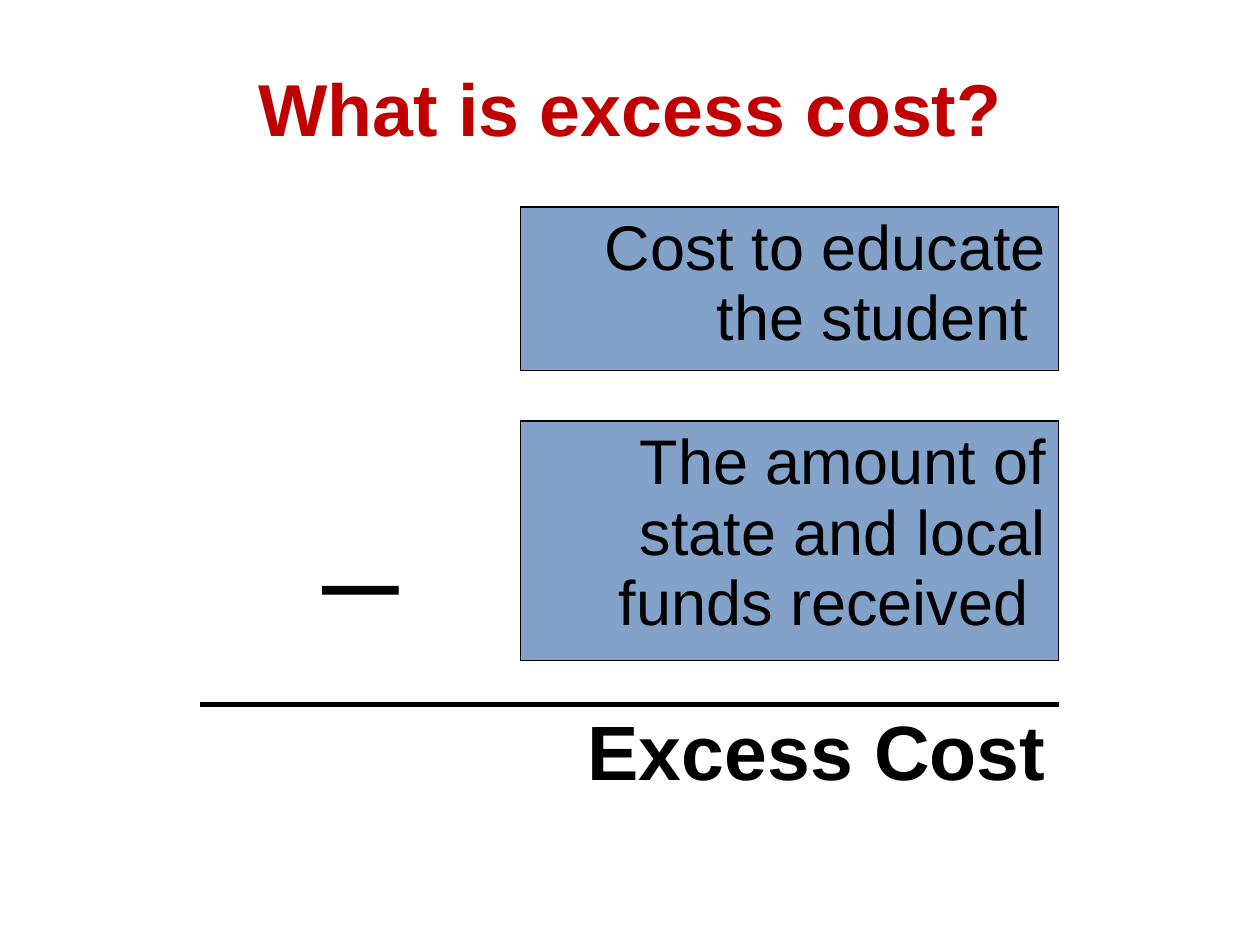
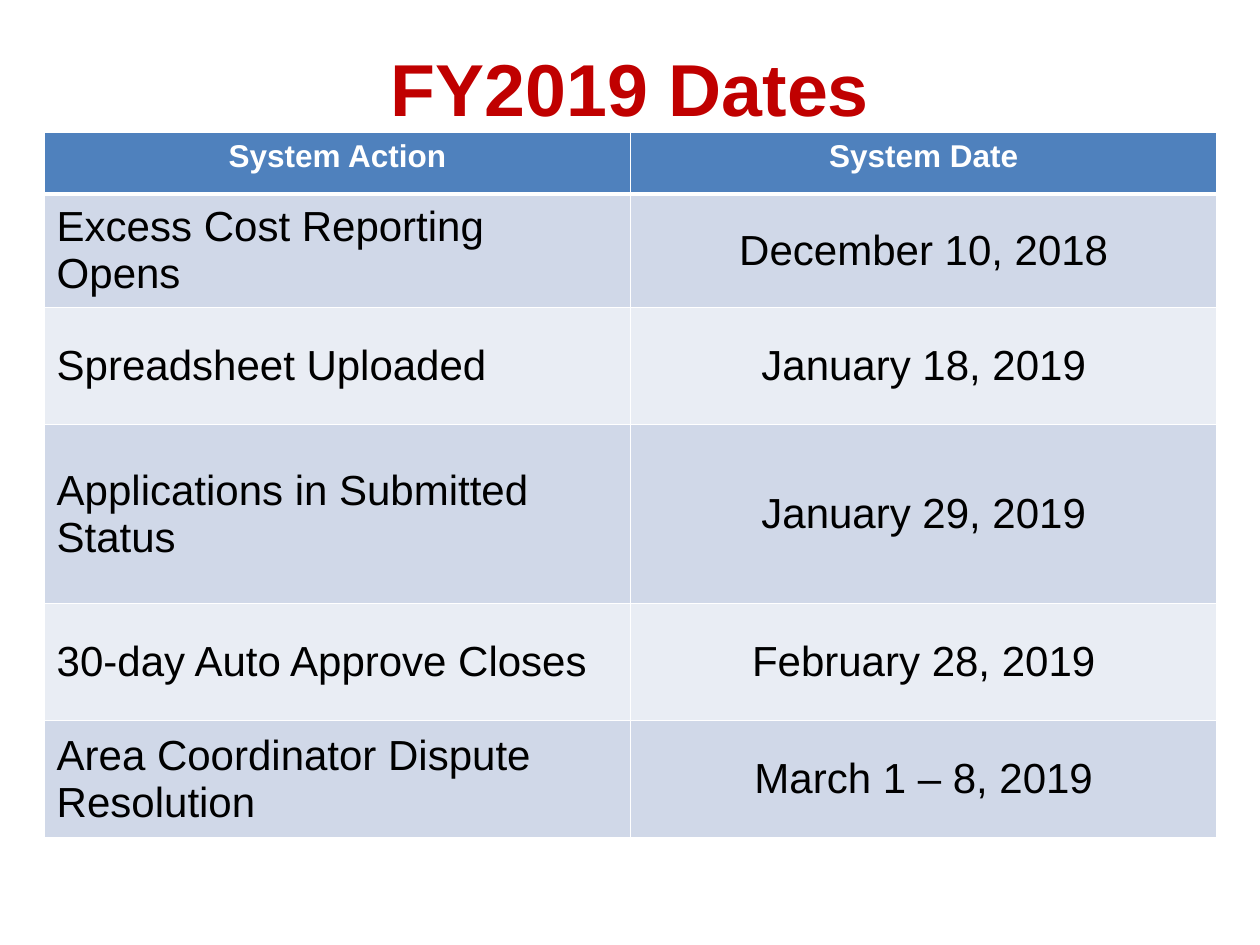
from lxml.etree import SubElement
from pptx import Presentation
from pptx.dml.color import RGBColor
from pptx.enum.text import MSO_ANCHOR, PP_ALIGN
from pptx.oxml.ns import qn
from pptx.util import Cm, Pt

RED = RGBColor(0xC0, 0x00, 0x00)
BLACK = RGBColor(0x00, 0x00, 0x00)
WHITE = RGBColor(0xFF, 0xFF, 0xFF)
STEEL = RGBColor(0x83, 0xA2, 0xCA)
BLUE = RGBColor(0x4F, 0x81, 0xBD)
BANDS = [RGBColor(0xD0, 0xD8, 0xE8), RGBColor(0xE9, 0xED, 0xF4)]
NO_STYLE = "{2D5ABB26-0587-4C30-8999-92F81FD0307C}"

TITLE = {"name": "Arial", "size": Pt(42), "bold": True}
TERM = {"name": "Arial", "size": Pt(36), "bold": False}
MINUS = {"name": "Calibri", "size": Pt(88), "bold": False}
RESULT = {"name": "Arial", "size": Pt(44), "bold": True}
HEAD = {"name": "Arial", "size": Pt(18), "bold": True}
BODY = {"name": "Arial", "size": Pt(24), "bold": False}


def write(tf, text, font, color, align):
    p = tf.paragraphs[0]
    p.alignment = align
    r = p.add_run()
    r.text = text
    for key, value in font.items():
        setattr(r.font, key, value)
    r.font.color.rgb = color
    return p


def add_grid(s, left, top, widths, heights, borders):
    frame = s.shapes.add_table(len(heights), len(widths), Cm(left), Cm(top),
                               Cm(sum(widths)), Cm(sum(heights)))
    table = frame.table
    table.first_row = table.horz_banding = False
    table._tbl.tblPr[0].text = NO_STYLE
    for col, width in zip(table.columns, widths):
        col.width = Cm(width)
    for i, height in enumerate(heights):
        table.rows[i].height = Cm(height)
        for j in range(len(widths)):
            tcPr = table.cell(i, j)._tc.get_or_add_tcPr()
            edges = borders(i, j)
            for side in "LRTB":
                if side in edges:
                    color, weight = edges[side]
                    ln = SubElement(tcPr, qn(f"a:ln{side}"), w=str(Pt(weight)))
                    solid = SubElement(ln, qn("a:solidFill"))
                    SubElement(solid, qn("a:srgbClr"), val=str(color))
    return table


prs = Presentation()
prs.slide_width, prs.slide_height = Cm(25.4), Cm(19.05)

slides = []
for text, top in [("What is excess cost?", 1.27), ("FY2019 Dates", 0.86)]:
    s = prs.slides.add_slide(prs.slide_layouts[6])
    tf = s.shapes.add_textbox(Cm(1.27), Cm(top), Cm(22.86), Cm(1.8)).text_frame
    tf.word_wrap = True
    for side in ("left", "top", "right", "bottom"):
        setattr(tf, f"margin_{side}", 0)
    write(tf, text, TITLE, RED, PP_ALIGN.CENTER)
    slides.append(s)

thin, thick = (BLACK, 1), (BLACK, 3)
box = dict.fromkeys("LRTB", thin)
sum_borders = [
    [{"R": thin}, box],
    [{}, {"T": thin, "B": thin}],
    [{"R": thin}, box],
    [{"B": thick}, {"T": thin, "B": thick}],
    [{"T": thick}, {"T": thick}],
]
table = add_grid(slides[0], 4.04, 4.17, [6.45, 10.85],
                 [3.28, 0.97, 4.62, 0.89, 3.28], lambda i, j: sum_borders[i][j])
table.cell(4, 0).merge(table.cell(4, 1))
for i, j, text, font, align in [
    (0, 1, "Cost to educate the student ", TERM, PP_ALIGN.RIGHT),
    (2, 0, "_", MINUS, PP_ALIGN.CENTER),
    (2, 1, "The amount of state and local funds received ", TERM, PP_ALIGN.RIGHT),
    (4, 0, "Excess Cost", RESULT, PP_ALIGN.RIGHT),
]:
    cell = table.cell(i, j)
    p = write(cell.text_frame, text, font, BLACK, align)
    if font is TERM:
        cell.fill.solid()
        cell.fill.fore_color.rgb = STEEL
    if i == 0:
        p._p.get_or_add_pPr().set("marL", str(Cm(1.27)))
for j in range(2):
    p = table.cell(3, j).text_frame.paragraphs[0]
    SubElement(p._p, qn("a:endParaRPr"), sz="1200")

dates = [
    ("System Action", "System Date"),
    ("Excess Cost Reporting Opens", "December 10, 2018"),
    ("Spreadsheet Uploaded", "January 18, 2019"),
    ("Applications in Submitted Status", "January 29, 2019"),
    ("30-day Auto Approve Closes", "February 28, 2019"),
    ("Area Coordinator Dispute Resolution", "March 1 – 8, 2019"),
]
rule, head_rule = (WHITE, 1), (WHITE, 3)
table = add_grid(slides[1], 0.89, 2.67, [11.82, 11.82],
                 [1.24, 2.16, 2.36, 3.61, 2.36, 2.36],
                 lambda i, j: {"L": rule, "R": rule,
                               "T": head_rule if i == 1 else rule,
                               "B": head_rule if i == 0 else rule})
for i, row in enumerate(dates):
    head = i == 0
    for j, text in enumerate(row):
        cell = table.cell(i, j)
        cell.vertical_anchor = MSO_ANCHOR.TOP if head else MSO_ANCHOR.MIDDLE
        cell.fill.solid()
        cell.fill.fore_color.rgb = BLUE if head else BANDS[(i - 1) % 2]
        write(cell.text_frame, text, HEAD if head else BODY, WHITE if head else BLACK,
              PP_ALIGN.CENTER if head or j else PP_ALIGN.LEFT)

prs.save("out.pptx")
